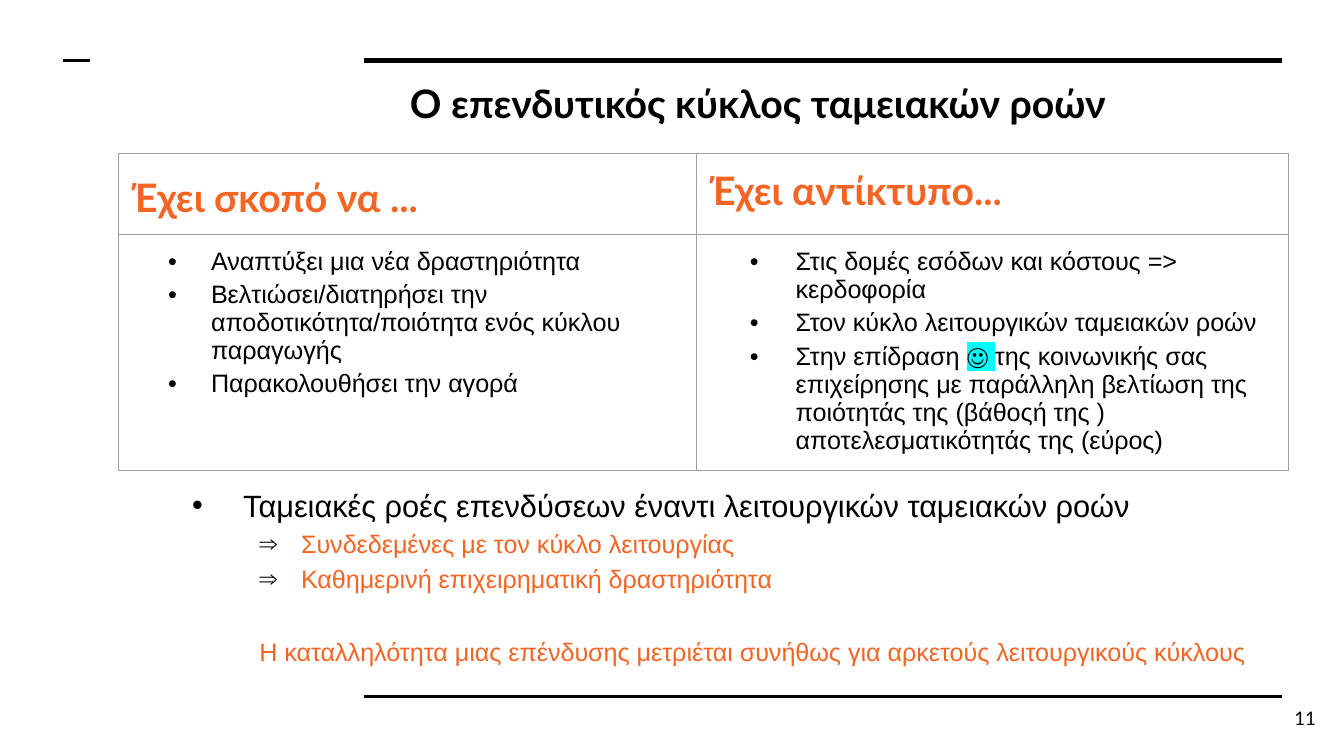
"""Slide on the investment cash flow cycle, laid out on a 0.1 inch grid."""
import pptx
import pptx.util
import pptx.dml.color
import pptx.enum.text
import pptx.enum.shapes
import pptx.oxml.ns
import lxml.etree

Pt = pptx.util.Pt
COLORS = {"ink": "000000", "accent": "F46524", "border": "9E9E9E", "mark": "00FFFF"}
HEAD = dict(font="Lato", size=21, color="accent", bold=True)
ITEM = dict(size=13.5, bullet="•", before=2.7)
SUB = dict(size=13.5, color="accent", level=1, before=2.7)


def grid(n):
    """Return the length of n grid cells."""
    return pptx.util.Inches(n / 10)


def rgb(name):
    """Return a palette colour."""
    return pptx.dml.color.RGBColor.from_string(COLORS[name])


def add_xml(parent, tag, **attrs):
    """Append a drawing element to parent."""
    return lxml.etree.SubElement(parent, pptx.oxml.ns.qn(tag), attrs)


def add_color(parent, tag, name):
    """Append an element that holds a palette colour."""
    el = add_xml(parent, tag)
    add_xml(el, "a:srgbClr", val=COLORS[name])
    return el


def add_run(p, text, font="Arial", size=13.5, color="ink", bold=False, mark=None):
    """Add a formatted run, highlighted if mark names a colour."""
    r = p.add_run()
    r.text = text
    r.font.name, r.font.size, r.font.bold = font, Pt(size), bold
    r.font.color.rgb = rgb(color)
    if mark:
        rPr = r.font._element
        fill = rPr.find(pptx.oxml.ns.qn("a:solidFill"))
        fill.addnext(add_color(rPr, "a:highlight", mark))


def write(tf, text, level=0, left=0, hang=0, bullet=None, before=0, spacing=1.0,
          align="LEFT", **style):
    """Write a paragraph of text, or of (text, style) parts, into a frame."""
    p = tf.paragraphs[0]
    if p.runs:
        p = tf.add_paragraph()
    p.level, p.line_spacing, p.space_before = level, spacing, Pt(before)
    p.alignment = pptx.enum.text.PP_ALIGN[align]
    pPr = p._p.get_or_add_pPr()
    pPr.set("marL", str(grid(left)))
    pPr.set("indent", str(-grid(hang)))
    if bullet:
        add_color(pPr, "a:buClr", "ink")
        add_xml(pPr, "a:buFont", typeface="Arial")
        add_xml(pPr, "a:buChar", char=bullet)
    else:
        add_xml(pPr, "a:buNone")
    for part, extra in [(text, {})] if isinstance(text, str) else text:
        add_run(p, part, **{**style, **extra})


def frame(sp, x, y, w, h, inset=1, anchor="TOP"):
    """Place a text shape on the grid and return its text frame."""
    sp.left, sp.top, sp.width, sp.height = map(grid, (x, y, w, h))
    tf = sp.text_frame
    tf.word_wrap = True
    tf.auto_size = pptx.enum.text.MSO_AUTO_SIZE.NONE
    tf.vertical_anchor = pptx.enum.text.MSO_ANCHOR[anchor]
    tf.margin_left = tf.margin_right = grid(1)
    tf.margin_top = tf.margin_bottom = grid(inset)
    return tf


def add_rule(s, x1, x2, y, width):
    """Draw a horizontal black rule."""
    ln = s.shapes.add_connector(pptx.enum.shapes.MSO_CONNECTOR.STRAIGHT,
                                *map(grid, (x1, y, x2, y)))
    ln.line.color.rgb, ln.line.width = rgb("ink"), Pt(width)
    add_xml(ln._element.spPr, "a:effectLst")


def style_cell(cell):
    """Give a cell thin borders, even margins and no fill."""
    cell.margin_left = cell.margin_right = cell.margin_top = cell.margin_bottom = grid(1)
    tcPr = cell._tc.get_or_add_tcPr()
    for side in "LRTB":
        add_color(add_xml(tcPr, f"a:ln{side}", w=str(Pt(0.75))), "a:solidFill", "border")
    cell.fill.background()


def add_columns(s, columns):
    """Add the table: one (width, heading, spacing, left, hang, items) per column."""
    widths = [c[0] for c in columns]
    table = s.shapes.add_table(2, len(columns), *map(grid, (8.8, 11.4, sum(widths), 23.6))).table
    table.first_row = table.horz_banding = False
    for row, height in zip(table.rows, (6, 17.6)):
        row.height = grid(height)
    for i, (width, heading, spacing, left, hang, items) in enumerate(columns):
        table.columns[i].width = grid(width)
        head, body = table.cell(0, i), table.cell(1, i)
        style_cell(head)
        style_cell(body)
        write(head.text_frame, heading, spacing=spacing, **HEAD)
        for n, item in enumerate(items):
            write(body.text_frame, item, level=1, left=left, hang=hang,
                  **{**ITEM, "before": 2.7 if n else 0})


def main():
    """Build and save the slide."""
    prs = pptx.Presentation()
    prs.slide_width, prs.slide_height = grid(100), grid(56.25)
    s = prs.slides.add_slide(prs.slide_layouts[1])
    write(frame(s.shapes.title, 29.5, 4.9, 54.9, 5.4),
          "Ο επενδυτικός κύκλος ταμειακών ροών", **{**HEAD, "color": "ink"})

    tf = frame(s.placeholders[1], 13.3, 35.7, 82.6, 15.8, inset=0.5)
    write(tf, "Ταμειακές ροές επενδύσεων έναντι λειτουργικών ταμειακών ροών",
          left=3.8, hang=3.8, bullet="•", size=16.5)
    for text in ("Συνδεδεμένες με τον κύκλο λειτουργίας",
                 "Καθημερινή επιχειρηματική δραστηριότητα"):
        write(tf, text, left=8.1, hang=3.1, bullet="⇒", **SUB)
    write(tf, "Η καταλληλότητα μιας επένδυσης μετριέται συνήθως για αρκετούς "
          "λειτουργικούς κύκλους", left=5, **{**SUB, "before": 22.5})

    for x1, x2, y, width in ((27.1, 95.4, 4.5, 3), (27.1, 95.4, 51.8, 1.5), (4.7, 6.7, 4.5, 1.5)):
        add_rule(s, x1, x2, y, width)

    impact = [("Στην επίδραση ", {}),
              ("☺ ", dict(font="Lato", size=13, mark="mark")),
              ("της κοινωνικής σας επιχείρησης με παράλληλη βελτίωση της ποιότητάς της "
               "(βάθοςή της ) αποτελεσματικότητάς της (εύρος)", {})]
    add_columns(s, [
        (43, "Έχει σκοπό να ...", 1.15, 5.9, 3.2, [
            "Αναπτύξει μια νέα δραστηριότητα",
            "Βελτιώσει/διατηρήσει την αποδοτικότητα/ποιότητα ενός κύκλου παραγωγής",
            "Παρακολουθήσει την αγορά"]),
        (44.1, "Έχει αντίκτυπο...", 1.0, 6.4, 3.4, [
            "Στις δομές εσόδων και κόστους => κερδοφορία",
            "Στον κύκλο λειτουργικών ταμειακών ροών",
            impact])])

    number = s.shapes.add_textbox(0, 0, 0, 0)
    write(frame(number, 92.9, 51.3, 6, 4.3, anchor="MIDDLE"), "11",
          align="RIGHT", font="Lato", size=10)
    prs.save("out.pptx")


if __name__ == "__main__":
    main()
